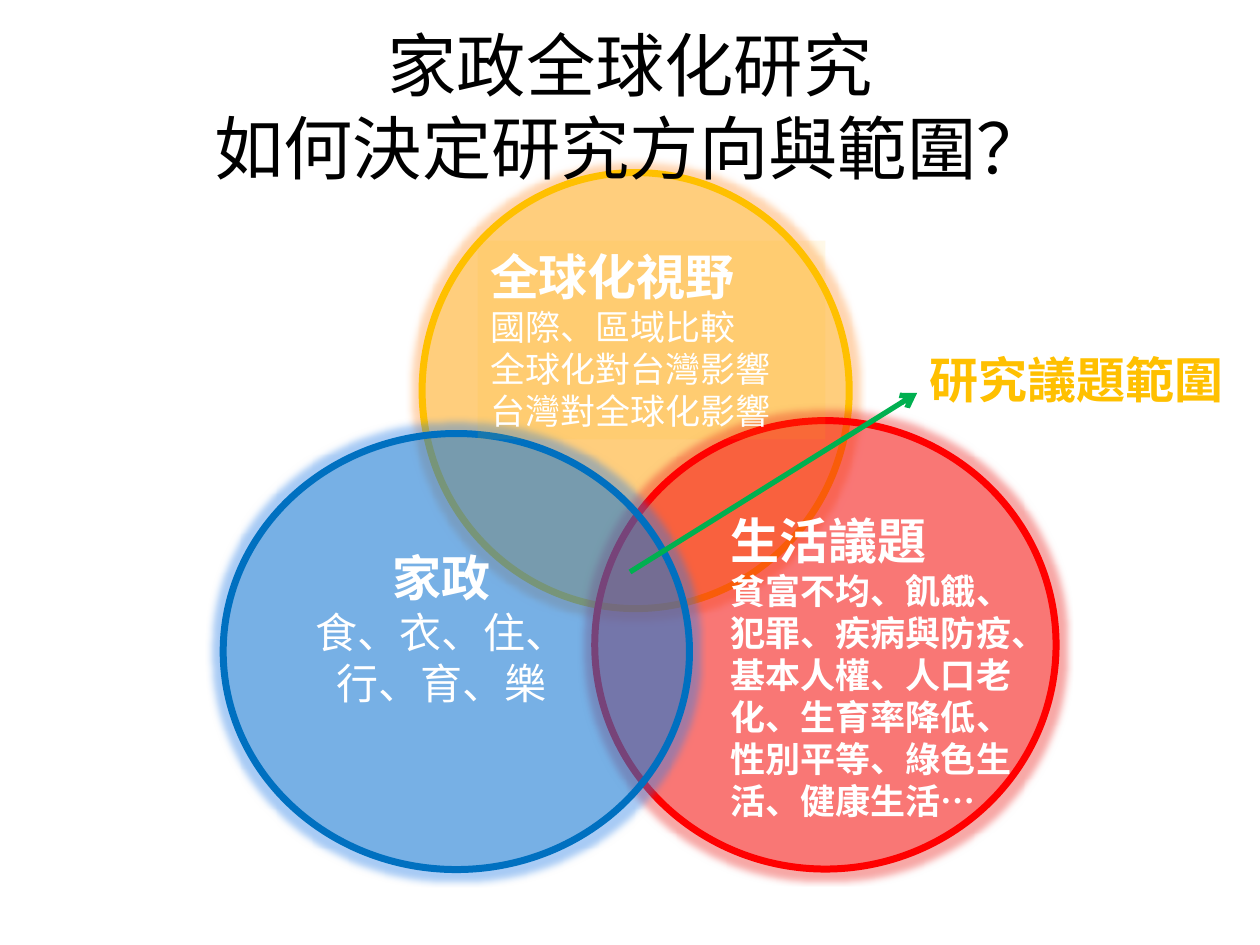
from dataclasses import dataclass

from lxml import etree
from pptx import Presentation
from pptx.dml.color import RGBColor
from pptx.enum.shapes import MSO_CONNECTOR, MSO_SHAPE
from pptx.enum.text import MSO_ANCHOR, MSO_AUTO_SIZE, PP_ALIGN
from pptx.oxml.ns import qn
from pptx.util import Cm, Pt

OVAL = MSO_SHAPE.OVAL
STRAIGHT = MSO_CONNECTOR.STRAIGHT
LEFT, CENTER = PP_ALIGN.LEFT, PP_ALIGN.CENTER
TOP, MIDDLE = MSO_ANCHOR.TOP, MSO_ANCHOR.MIDDLE
GROW, FIXED = MSO_AUTO_SIZE.SHAPE_TO_FIT_TEXT, MSO_AUTO_SIZE.NONE


@dataclass(frozen=True)
class Theme:
    yellow: str = "FFC000"
    red: str = "FF0000"
    blue: str = "0070C0"
    green: str = "00B050"
    black: str = "000000"
    white: str = "FFFFFF"
    yellow_glow: str = "FF983E"
    red_glow: str = "EB2622"
    blue_glow: str = "267DE6"
    latin: str = "Calibri"
    cjk: str = "Noto Sans CJK SC"
    title: float = 39.6
    heading: float = 28
    large: float = 24
    body: float = 20
    circle_alpha: int = 29
    panel_alpha: int = 9
    glow_alpha: int = 40
    glow_radius: float = 8


THEME = Theme()


@dataclass(frozen=True)
class Box:
    left: float
    top: float
    width: float
    height: float

    def emu(self) -> tuple:
        return Cm(self.left), Cm(self.top), Cm(self.width), Cm(self.height)


@dataclass(frozen=True)
class Circle:
    box: Box
    color: str
    glow: str


@dataclass(frozen=True)
class Line:
    text: str
    size: float
    bold: bool = False


@dataclass(frozen=True)
class TextBlock:
    box: Box
    lines: tuple
    color: str = THEME.white
    font: str = THEME.cjk
    align: PP_ALIGN = LEFT
    anchor: MSO_ANCHOR = TOP
    fit: MSO_AUTO_SIZE = GROW
    fill: str = ""


TITLE = TextBlock(
    Box(1.27, 0.53, 22.86, 3.18),
    (Line("家政全球化研究\v如何決定研究方向與範圍？", THEME.title),),
    color=THEME.black, font=THEME.latin, align=CENTER, anchor=MIDDLE, fit=FIXED)

GLOBAL_CIRCLE = Circle(Box(8.51, 3.48, 8.61, 8.79), THEME.yellow, THEME.yellow_glow)
ISSUES_CIRCLE = Circle(Box(11.99, 8.48, 9.3, 9.04), THEME.red, THEME.red_glow)
HOME_CIRCLE = Circle(Box(4.5, 8.74, 9.4, 8.79), THEME.blue, THEME.blue_glow)

CIRCLE_TEXTS = (
    TextBlock(Box(9.63, 4.85, 7.01, 4.01), (
        Line("全球化視野", THEME.heading, True),
        Line("國際、區域比較", THEME.body),
        Line("全球化對台灣影響", THEME.body),
        Line("台灣對全球化影響", THEME.body)), fill=THEME.yellow),
    TextBlock(Box(6.1, 10.92, 5.59, 3.51), (
        Line("家政", THEME.heading, True),
        Line("食、衣、住、行、育、樂", THEME.large)), align=CENTER),
    TextBlock(Box(14.48, 10.16, 6.81, 6.58), (
        Line("生活議題", THEME.heading, True),
        Line("貧富不均、飢餓、", THEME.body, True),
        Line("犯罪、疾病與防疫、", THEME.body, True),
        Line("基本人權、人口老化、生育率降低、性別平等、綠色生活、健康生活…",
             THEME.body, True))),
)

SCOPE_LABEL = TextBlock(
    Box(18.49, 6.93, 6.5, 1.45), (Line("研究議題範圍", THEME.heading, True),),
    color=THEME.yellow, font=THEME.latin)


def rgb(color: str) -> RGBColor:
    return RGBColor.from_string(color)


def add_alpha(color_element, percent: int) -> None:
    etree.SubElement(color_element, qn("a:alpha"), val=str(percent * 1000))


def set_fill(sp, color: str, percent: int) -> None:
    sp.fill.solid()
    sp.fill.fore_color.rgb = rgb(color)
    solid = sp._element.spPr.find(qn("a:solidFill"))
    add_alpha(solid.find(qn("a:srgbClr")), percent)


def add_circle(s, circle: Circle) -> None:
    sp = s.shapes.add_shape(OVAL, *circle.box.emu())
    set_fill(sp, circle.color, THEME.circle_alpha)
    sp.line.color.rgb = rgb(circle.color)
    sp.line.width = Pt(4)
    # The empty effect list takes the glow in place of the shadow
    sp.shadow.inherit = False
    effects = sp._element.spPr.find(qn("a:effectLst"))
    glow = etree.SubElement(effects, qn("a:glow"), rad=str(Pt(THEME.glow_radius)))
    color = etree.SubElement(glow, qn("a:srgbClr"), val=circle.glow)
    add_alpha(color, THEME.glow_alpha)


def add_text(s, block: TextBlock) -> None:
    sp = s.shapes.add_textbox(*block.box.emu())
    if block.fill:
        set_fill(sp, block.fill, THEME.panel_alpha)
    tf = sp.text_frame
    tf.word_wrap = True
    tf.auto_size = block.fit
    tf.vertical_anchor = block.anchor
    for i, line in enumerate(block.lines):
        p = tf.add_paragraph() if i else tf.paragraphs[0]
        p.text = line.text
        p.alignment = block.align
        p.font.name = block.font
        p.font.size = Pt(line.size)
        p.font.bold = line.bold
        p.font.color.rgb = rgb(block.color)


def add_arrow(s, x1: float, y1: float, x2: float, y2: float) -> None:
    arrow = s.shapes.add_connector(STRAIGHT, Cm(x1), Cm(y1), Cm(x2), Cm(y2))
    arrow.line.color.rgb = rgb(THEME.green)
    arrow.line.width = Pt(3)
    spPr = arrow._element.spPr
    etree.SubElement(spPr.find(qn("a:ln")), qn("a:tailEnd"), type="arrow")
    etree.SubElement(spPr, qn("a:effectLst"))


def main() -> None:
    prs = Presentation()
    prs.slide_width, prs.slide_height = Cm(25.4), Cm(19.05)
    s = prs.slides.add_slide(prs.slide_layouts[6])

    # Title lies over the top circle, below the other two
    add_circle(s, GLOBAL_CIRCLE)
    add_text(s, TITLE)
    add_circle(s, ISSUES_CIRCLE)
    add_circle(s, HOME_CIRCLE)

    # Circle contents
    for block in CIRCLE_TEXTS:
        add_text(s, block)

    # Arrow from the shared area to its label
    add_arrow(s, 12.7, 11.53, 18.49, 7.92)
    add_text(s, SCOPE_LABEL)

    prs.save("out.pptx")


if __name__ == "__main__":
    main()
